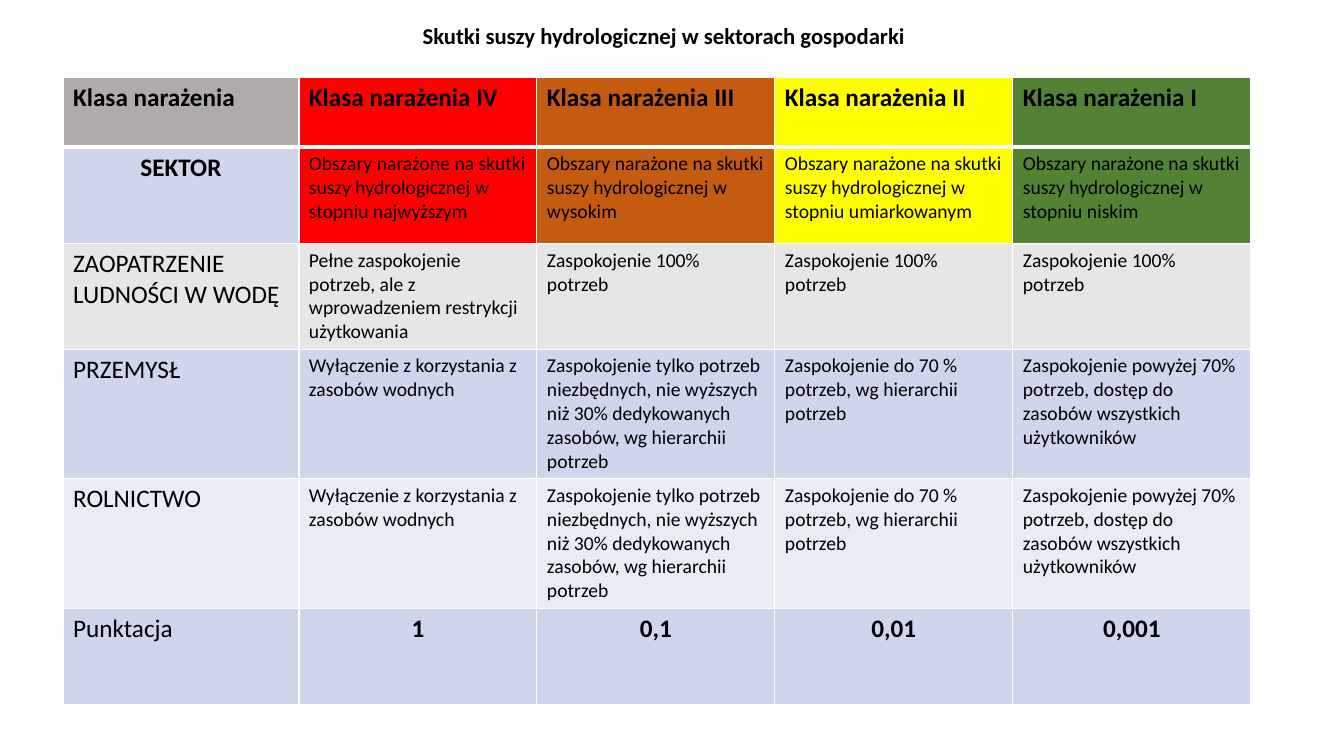
"""Build the slide on hydrological drought effects across economic sectors."""
from dataclasses import dataclass
from typing import Any

from lxml import etree
from pptx import Presentation
from pptx import util as u
from pptx.dml.color import RGBColor
from pptx.enum import text
from pptx.oxml import ns

FONT = "Calibri"
RISK_FILLS = ["FF0000", "C55A11", "FFFF00", "548235"]
BLUE, GREY, PALE = "CFD5EA", "E7E6E6", "E9EBF5"
LEFT, CENTER = text.PP_ALIGN.LEFT, text.PP_ALIGN.CENTER
COLUMN_WIDTHS = [168.5] + [170] * 4
SATISFIED = "Zaspokojenie 100% potrzeb"
LIMITED_USE = [
    "Wyłączenie z korzystania z zasobów wodnych",
    "Zaspokojenie tylko potrzeb niezbędnych, nie wyższych niż 30% dedykowanych zasobów, wg hierarchii potrzeb",
    "Zaspokojenie do 70 % potrzeb, wg hierarchii potrzeb",
    "Zaspokojenie powyżej 70% potrzeb, dostęp do zasobów wszystkich użytkowników",
]
AREA = "Obszary narażone na skutki suszy hydrologicznej w "


@dataclass
class Style:
    size: float
    bold: bool = False
    align: Any = LEFT


@dataclass
class Row:
    height: float
    label: str
    values: list[str]
    label_fill: str
    value_fills: list[str]
    label_style: Style
    value_style: Style


HEADING, LABEL, BODY = Style(18, True), Style(18), Style(14)
CENTERED = Style(18, True, CENTER)
ROWS = [
    Row(50, "Klasa narażenia", [f"Klasa narażenia {n}" for n in ("IV", "III", "II", "I")],
        "AFABAB", RISK_FILLS, HEADING, HEADING),
    Row(69, "SEKTOR",
        [AREA + degree for degree in
         ("stopniu najwyższym", "wysokim", "stopniu umiarkowanym", "stopniu niskim")],
        BLUE, RISK_FILLS, CENTERED, BODY),
    Row(75.5, "ZAOPATRZENIE LUDNOŚCI W WODĘ",
        ["Pełne zaspokojenie potrzeb, ale z wprowadzeniem restrykcji użytkowania"] + [SATISFIED] * 3,
        GREY, [GREY] * 4, LABEL, BODY),
    Row(92.5, "PRZEMYSŁ", LIMITED_USE, BLUE, [BLUE] * 4, LABEL, BODY),
    Row(92.5, "ROLNICTWO", LIMITED_USE, PALE, [PALE] * 4, LABEL, BODY),
    Row(69, "Punktacja", ["1", "0,1", "0,01", "0,001"], BLUE, [BLUE] * 4, LABEL, CENTERED),
]


def color(value: str) -> RGBColor:
    return RGBColor.from_string(value)


def write(tf: Any, content: str, style: Style) -> None:
    p = tf.paragraphs[0]
    p.alignment = style.align
    r = p.add_run()
    r.text = content
    for name, value in {"name": FONT, "size": u.Pt(style.size), "bold": style.bold}.items():
        setattr(r.font, name, value)
    r.font.color.rgb = color("000000")


def add_borders(cell: Any, widths: dict[str, float]) -> None:
    props = cell._tc.get_or_add_tcPr()
    for side, width in widths.items():
        line = etree.SubElement(props, ns.qn(f"a:ln{side}"), w=str(u.Pt(width)))
        fill = etree.SubElement(line, ns.qn("a:solidFill"))
        etree.SubElement(fill, ns.qn("a:srgbClr"), val="FFFFFF")


def add_title(s: Any) -> None:
    sp = s.shapes.title
    box = {"left": 53.5, "top": 14.5, "width": 841, "height": 24}
    for name, value in box.items():
        setattr(sp, name, u.Pt(value))
    tf = sp.text_frame
    settings = {"word_wrap": True, "auto_size": text.MSO_AUTO_SIZE.NONE,
                "vertical_anchor": text.MSO_ANCHOR.MIDDLE}
    for name, value in settings.items():
        setattr(tf, name, value)
    write(tf, "Skutki suszy hydrologicznej w sektorach gospodarki", Style(16.2, True, CENTER))
    tf.paragraphs[0].line_spacing = 0.9


def add_risk_table(s: Any) -> None:
    table = s.shapes.add_table(
        len(ROWS), len(COLUMN_WIDTHS), u.Pt(45), u.Pt(55),
        u.Pt(sum(COLUMN_WIDTHS)), u.Pt(sum(row.height for row in ROWS))).table
    for column, width in zip(table.columns, COLUMN_WIDTHS):
        column.width = u.Pt(width)
    for i, row in enumerate(ROWS):
        table.rows[i].height = u.Pt(row.height)
        contents = [row.label] + row.values
        fills = [row.label_fill] + row.value_fills
        styles = [row.label_style] + [row.value_style] * len(row.values)
        borders = {"L": 1, "R": 1, "T": 3 if i == 1 else 1, "B": 3 if i == 0 else 1}
        for j, (content, fill, style) in enumerate(zip(contents, fills, styles)):
            cell = table.cell(i, j)
            add_borders(cell, borders)
            cell.fill.solid()
            cell.fill.fore_color.rgb = color(fill)
            write(cell.text_frame, content, style)


def main() -> None:
    prs = Presentation()
    prs.slide_width, prs.slide_height = u.Pt(960), u.Pt(540)
    s = prs.slides.add_slide(prs.slide_layouts[5])
    add_title(s)
    add_risk_table(s)
    prs.save("out.pptx")


if __name__ == "__main__":
    main()
